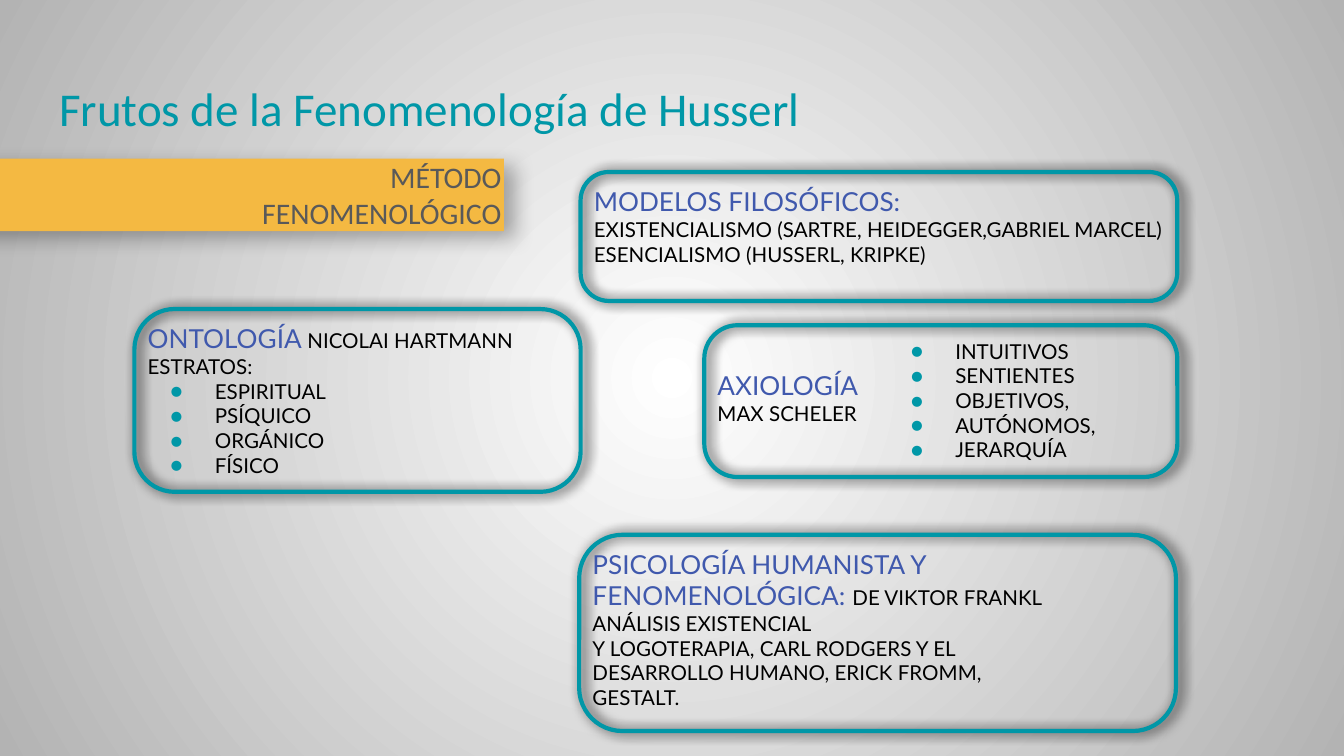
from lxml.etree import SubElement
from pptx import Presentation
from pptx.dml.color import RGBColor
from pptx.enum.shapes import MSO_SHAPE
from pptx.enum.text import MSO_ANCHOR, MSO_AUTO_SIZE, PP_ALIGN
from pptx.oxml.ns import qn
from pptx.util import Inches, Pt

TEAL = RGBColor(0x00, 0x97, 0xA7)
INDIGO = RGBColor(0x40, 0x59, 0xAD)
YELLOW = RGBColor(0xF4, 0xB9, 0x42)
GREY = RGBColor(0x59, 0x59, 0x59)
SILVER = RGBColor(0xB3, 0xB3, 0xB3)
WHITE = RGBColor(0xFF, 0xFF, 0xFF)
BLACK = RGBColor(0x00, 0x00, 0x00)

TITLE = ("Calibri", 25.2, TEAL)
LABEL = ("Calibri", 16, GREY)
HEADING = ("Lato", 14, INDIGO)
BODY = ("Lato", 11, BLACK)


def inches(values):
    """Turn plain numbers into lengths."""
    return [Inches(value) for value in values]


def add_child(parent, tag, **attributes):
    """Append a DrawingML element with the given attributes."""
    return SubElement(parent, qn(tag), {key: str(value) for key, value in attributes.items()})


def paint_background(page):
    """Fill the page with a gradient that radiates from its centre."""
    fill = page.background.fill
    fill.gradient()
    for stop, colour in zip(fill.gradient_stops, (WHITE, SILVER)):
        stop.color.rgb = colour
    linear = next(page.element.iter(qn("a:lin")))
    gradient = linear.getparent()
    gradient.remove(linear)
    circle = add_child(gradient, "a:path", path="circle")
    add_child(circle, "a:fillToRect", l=50000, t=50000, r=50000, b=50000)


def add_shadow(shape, blur, distance, angle, opacity):
    """Give a shape a black outer shadow."""
    shape.shadow.inherit = False
    effects = shape.element.spPr.find(qn("a:effectLst"))
    shadow = add_child(effects, "a:outerShdw", blurRad=Pt(blur), dist=Pt(distance),
                       dir=angle * 60000, algn="bl", rotWithShape=0)
    colour = add_child(shadow, "a:srgbClr", val=BLACK)
    add_child(colour, "a:alpha", val=opacity * 1000)


def add_frame(shapes, place):
    """Draw an unfilled rounded frame with a teal outline."""
    frame = shapes.add_shape(MSO_SHAPE.ROUNDED_RECTANGLE, *inches(place))
    frame.adjustments[0] = 0.22
    frame.fill.background()
    frame.line.color.rgb = TEAL
    frame.line.width = Pt(2.25)
    add_shadow(frame, 6.8, 2.2, 0, 100)


def add_band(shapes, place):
    """Draw the yellow band behind the method label."""
    band = shapes.add_shape(MSO_SHAPE.RECTANGLE, *inches(place))
    band.fill.solid()
    band.fill.fore_color.rgb = YELLOW
    band.line.fill.background()
    add_shadow(band, 11.2, 6.8, 33, 30)


def format_span(span, style):
    """Apply a font name, size and colour to a run."""
    span.font.name, size, span.font.color.rgb = style
    span.font.size = Pt(size)


def set_insets(frame):
    """Set equal insets and wrapping on a text frame."""
    frame.margin_left = frame.margin_right = Inches(0.1)
    frame.margin_top = frame.margin_bottom = Inches(0.1)
    frame.word_wrap = True


def add_bullet(para):
    """Hang a teal bullet in front of a paragraph."""
    properties = para._p.get_or_add_pPr()
    properties.set("marL", str(Inches(0.5)))
    properties.set("indent", str(Inches(-0.33)))
    add_child(add_child(properties, "a:buClr"), "a:srgbClr", val=TEAL)
    add_child(properties, "a:buSzPts", val=1100)
    add_child(properties, "a:buFont", typeface="Lato")
    add_child(properties, "a:buChar", char="●")


def add_text(shapes, place, lines, bullets=(), align=PP_ALIGN.LEFT):
    """Write lines of styled spans, followed by bulleted items."""
    frame = shapes.add_textbox(*inches(place)).text_frame
    set_insets(frame)
    items = [[(bullet, BODY)] for bullet in bullets]
    for index, spans in enumerate(lines + items):
        para = frame.add_paragraph() if index else frame.paragraphs[0]
        para.alignment = align
        for text, style in spans:
            span = para.add_run()
            span.text = text
            format_span(span, style)
        if index >= len(lines):
            add_bullet(para)


def set_title(page, text):
    """Place and format the title."""
    title = page.shapes.title
    title.left, title.top, title.width, title.height = inches((0.34, 0.49, 9.32, 0.63))
    frame = title.text_frame
    frame.text = text
    set_insets(frame)
    frame.auto_size = MSO_AUTO_SIZE.NONE
    frame.vertical_anchor = MSO_ANCHOR.TOP
    para = frame.paragraphs[0]
    para.alignment = PP_ALIGN.LEFT
    format_span(para.runs[0], TITLE)


def main():
    """Build the slide and save it."""
    deck = Presentation()
    deck.slide_width, deck.slide_height = inches((10, 10 * 9 / 16))
    page = deck.slides.add_slide(deck.slide_layouts[5])
    paint_background(page)
    set_title(page, "Frutos de la Fenomenología de Husserl")

    add_band(page.shapes, (-1.04, 1.18, 4.79, 0.54))
    add_text(page.shapes, (1.59, 1.08, 2.24, 0.74),
             [[("MÉTODO", LABEL)], [("FENOMENOLÓGICO", LABEL)]], align=PP_ALIGN.RIGHT)

    models = page.shapes.add_group_shape().shapes
    add_frame(models, (4.32, 1.28, 4.44, 0.96))
    add_text(models, (4.32, 1.28, 4.44, 0.99), [
        [("MODELOS FILOSÓFICOS:", HEADING)],
        [("EXISTENCIALISMO (SARTRE, HEIDEGGER,GABRIEL MARCEL)", BODY)],
        [("ESENCIALISMO (HUSSERL, KRIPKE)", BODY)],
    ])

    ontology = (1, 2.3, 3.32, 1.36)
    add_frame(page.shapes, ontology)
    add_text(page.shapes, ontology, [
        [("ONTOLOGÍA", HEADING), (" NICOLAI HARTMANN", BODY)],
        [("ESTRATOS:", BODY)],
    ], ("ESPIRITUAL", "PSÍQUICO", "ORGÁNICO", "FÍSICO"))

    axiology = page.shapes.add_group_shape().shapes
    add_frame(axiology, (5.24, 2.42, 3.52, 1.13))
    add_text(axiology, (5.24, 2.65, 1.27, 0.62),
             [[("AXIOLOGÍA", HEADING)], [("MAX SCHELER", BODY)]])
    add_text(axiology, (6.51, 2.42, 2.24, 1.13), [],
             ("INTUITIVOS", "SENTIENTES", "OBJETIVOS,", "AUTÓNOMOS,", "JERARQUÍA"))

    add_frame(page.shapes, (4.31, 3.98, 4.44, 1.46))
    add_text(page.shapes, (4.31, 3.98, 3.65, 1.41), [
        [("PSICOLOGÍA HUMANISTA Y FENOMENOLÓGICA: ", HEADING), ("DE VIKTOR FRANKL", BODY)],
        [("ANÁLISIS EXISTENCIAL", BODY)],
        [("Y LOGOTERAPIA, CARL RODGERS Y EL DESARROLLO HUMANO, ERICK FROMM, GESTALT.", BODY)],
    ])

    deck.save("out.pptx")


if __name__ == "__main__":
    main()
